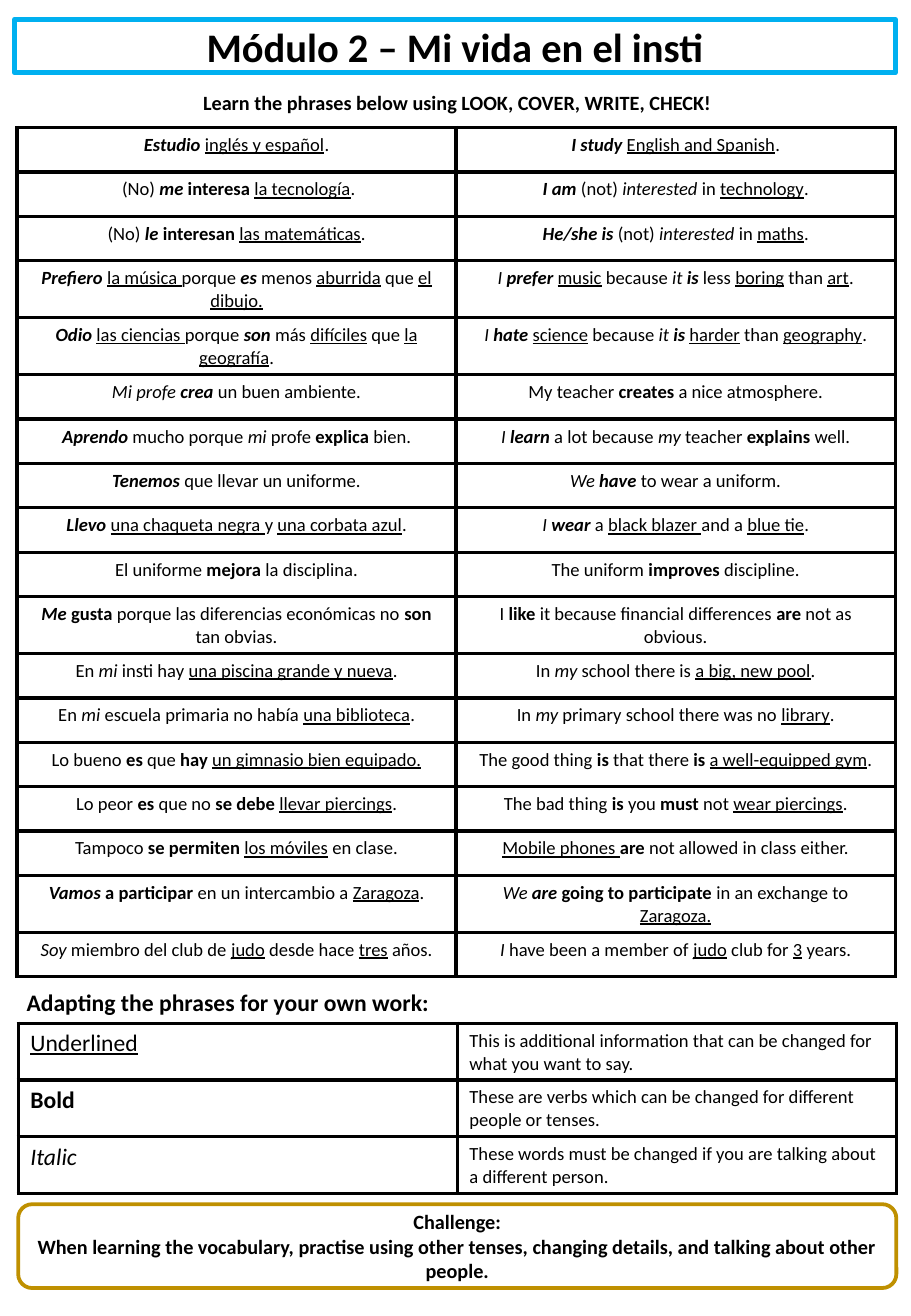
"""Build a one-page Spanish vocabulary sheet: title, phrase table, key and challenge."""
import itertools

import lxml.etree
import pptx
import pptx.dml.color
import pptx.enum.shapes
import pptx.enum.text
import pptx.oxml.ns
import pptx.util

COLOURS = {"ink": "000000", "paper": "FFFFFF", "title": "00B0F0", "challenge": "BF9000"}
FONT = "Calibri"
CENTER = pptx.enum.text.PP_ALIGN.CENTER
LEFT = pptx.enum.text.PP_ALIGN.LEFT
MIDDLE = pptx.enum.text.MSO_ANCHOR.MIDDLE
qn = pptx.oxml.ns.qn

# In the wording, *bold*, ~italic~ and _underlined_ mark the runs.
PHRASES = [
    ("*~Estudio ~*_inglés y español_.", "*~I study ~*_English and Spanish_."),
    (" (No) *~me~ interesa *_la tecnología_.", "*~I am ~*(not) ~interested~ in _technology_."),
    ("(No) *~le~ interesan *_las matemáticas_.", "*~He/she is ~*(not) ~interested~ in _maths_."),
    ("*~Prefiero ~*_la música _porque *~es~* menos _aburrida_ que _el dibujo._",
     "~I *prefer *~_music_ because ~it *is *~less _boring_ than _art_."),
    ("*~Odio ~*_las ciencias _porque *~son~* más _difíciles_ que _la geografía_.",
     "~I *hate *~_science_ because ~it *is *~_harder_ than _geography_."),
    ("~Mi profe *crea *~un buen ambiente.", "My teacher *creates* a nice atmosphere."),
    ("*~Aprendo~* mucho porque ~mi~ profe *explica* bien.",
     "~I *learn *~a lot because ~my ~teacher *explains *well."),
    ("*~Tenemos~* que llevar un uniforme.", "~We *have *~to wear a uniform."),
    ("*~Llevo ~*_una chaqueta negra _y _una corbata azul_.",
     "~I *wear *~a _black blazer _and a _blue tie_."),
    ("El uniforme *mejora* la disciplina.", "The uniform *improves* discipline."),
    ("*~Me~ gusta *porque las diferencias económicas no *son* tan obvias.",
     "I *like *it because financial differences *are *not as obvious."),
    ("En ~mi~ insti hay _una piscina grande y nueva_.",
     "In ~my ~school there is _a big, new pool_."),
    ("En ~mi ~escuela primaria no había _una biblioteca_.",
     "In ~my ~primary school there was no _library_."),
    ("Lo bueno *es* que *hay *_un gimnasio bien equipado._",
     "The good thing *is *that there *is *_a well-equipped gym_."),
    ("Lo peor *es* que no *se debe *_llevar piercings_.",
     "The bad thing *is *you *must *not _wear piercings_."),
    ("Tampoco *se permiten *_los móviles_ en clase.",
     "_Mobile phones _*are *not allowed in class either."),
    ("*~Vamos~ a participar *en un intercambio a _Zaragoza_.",
     "~We *are ~going to participate *in an exchange to _Zaragoza._"),
    ("~Soy~ miembro del club de _judo_ desde hace _tres_ años.",
     "~I ~have been a member of _judo_ club for _3_ years."),
]
TWO_LINE_ROWS = {3, 4, 10, 16}
KEY = [
    ("_Underlined_", "This is additional information that can be changed for what you want to say."),
    ("*Bold*", "These are verbs which can be changed for different people or tenses."),
    ("~Italic~", "These words must be changed if you are talking about a different person."),
]

prs = pptx.Presentation()
prs.slide_width = pptx.util.Inches(7.5)
prs.slide_height = pptx.util.Inches(10.83)
COL = prs.slide_width / 75
ROW = prs.slide_height / 108.3
s = prs.slides.add_slide(prs.slide_layouts[5])


def box(left, top, width, height):
    return int(left * COL), int(top * ROW), int(width * COL), int(height * ROW)


def write(tf, lines, size, align):
    tf.word_wrap = True
    tf.text = "\n".join([""] * len(lines))
    for p, line in zip(tf.paragraphs, lines):
        p.alignment = align
        marks = set()
        for is_mark, chars in itertools.groupby(line, key=lambda ch: ch in "*~_"):
            if is_mark:
                marks ^= set(chars)
                continue
            r = p.add_run()
            r.text = "".join(chars)
            r.font.name = FONT
            r.font.size = pptx.util.Pt(size)
            r.font.bold = "*" in marks
            r.font.italic = "~" in marks
            r.font.underline = "_" in marks
            r.font.color.rgb = pptx.dml.color.RGBColor.from_string(COLOURS["ink"])


title = s.shapes.title
title.left, title.top, title.width, title.height = box(1.2, 1.6, 72.5, 4.4)
geom = lxml.etree.SubElement(title.element.spPr, qn("a:prstGeom"), prst="roundRect")
lxml.etree.SubElement(geom, qn("a:avLst"))
challenge = s.shapes.add_shape(
    pptx.enum.shapes.MSO_SHAPE.ROUNDED_RECTANGLE, *box(1.5, 99.1, 72.3, 6.9))
challenge.shadow.inherit = False
panels = [
    (title, "title", 3, 24, ["*Módulo 2 – Mi vida en el insti*"]),
    (challenge, "challenge", 2.25, 12, [
        "*Challenge:*",
        "*When learning the vocabulary, practise using other tenses, changing details, "
        "and talking about other people.*"]),
]
for sp, colour, weight, size, lines in panels:
    sp.fill.solid()
    sp.fill.fore_color.rgb = pptx.dml.color.RGBColor.from_string(COLOURS["paper"])
    sp.line.color.rgb = pptx.dml.color.RGBColor.from_string(COLOURS[colour])
    sp.line.width = pptx.util.Pt(weight)
    sp.text_frame.auto_size = pptx.enum.text.MSO_AUTO_SIZE.NONE
    sp.text_frame.vertical_anchor = MIDDLE
    write(sp.text_frame, lines, size, CENTER)

headings = [
    (box(1.4, 6.9, 72.5, 3), "*Learn the phrases below using LOOK, COVER, WRITE, CHECK!*", 12, CENTER),
    (box(1.2, 80.8, 39.2, 3.4), "*Adapting the phrases for your own work:*", 14, LEFT),
]
for place, text, size, align in headings:
    tf = s.shapes.add_textbox(*place).text_frame
    tf.auto_size = pptx.enum.text.MSO_AUTO_SIZE.SHAPE_TO_FIT_TEXT
    write(tf, [text], size, align)

TALL = 4.7
SHORT = (69.9 - TALL * len(TWO_LINE_ROWS)) / (len(PHRASES) - len(TWO_LINE_ROWS))
phrase_heights = [TALL if i in TWO_LINE_ROWS else SHORT for i in range(len(PHRASES))]
tables = [
    (box(1.4, 10.5, 72.3, 69.9), PHRASES, phrase_heights, (11, 11), CENTER),
    (box(1.5, 84.2, 72.3, 14), KEY, [14 / len(KEY)] * len(KEY), (14, 11), LEFT),
]
for place, rows, heights, sizes, align in tables:
    table = s.shapes.add_table(len(rows), 2, *place).table
    table.first_row = table.horz_banding = False
    for i, (texts, height) in enumerate(zip(rows, heights)):
        table.rows[i].height = int(height * ROW)
        for j, (text, size) in enumerate(zip(texts, sizes)):
            cell = table.cell(i, j)
            cell.fill.background()
            write(cell.text_frame, [text], size, align)
            tcPr = cell._tc.get_or_add_tcPr()
            for k, side in enumerate(("lnL", "lnR", "lnT", "lnB")):
                ln = lxml.etree.Element(qn("a:" + side), w=str(pptx.util.Pt(2.25)))
                fill = lxml.etree.SubElement(ln, qn("a:solidFill"))
                lxml.etree.SubElement(fill, qn("a:srgbClr"), val=COLOURS["ink"])
                tcPr.insert(k, ln)

prs.save("out.pptx")
